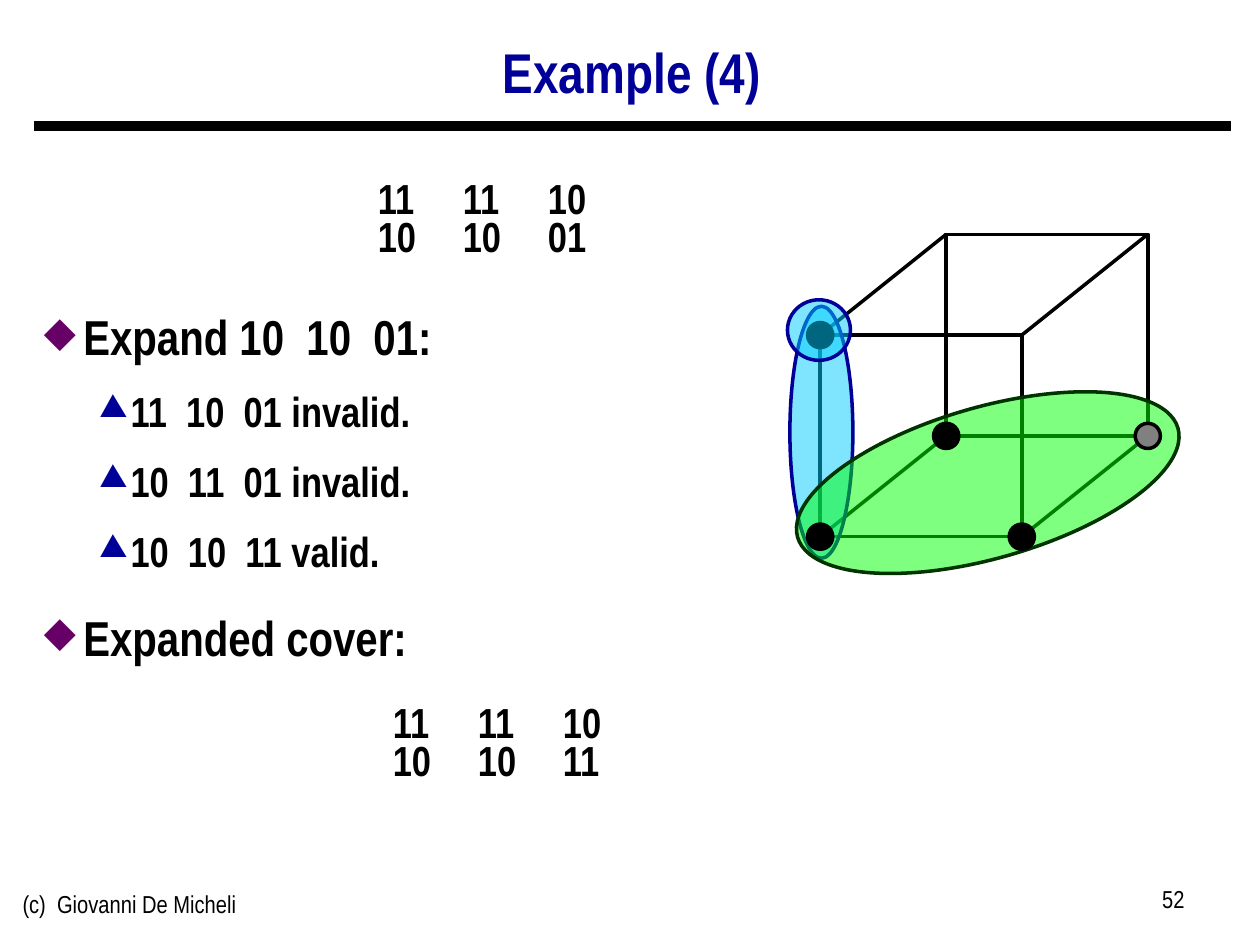
from dataclasses import dataclass
from typing import Optional

from lxml.etree import SubElement
from pptx import Presentation
from pptx.dml.color import RGBColor
from pptx.enum.shapes import MSO_CONNECTOR as Connector, MSO_SHAPE as Shape
from pptx.enum.text import MSO_ANCHOR as Anchor, PP_ALIGN as Align
from pptx.oxml.ns import qn
from pptx.util import Pt


@dataclass(frozen=True)
class Theme:
    font: str = "Arial Narrow"
    ink: str = "000000"
    navy: str = "000099"
    purple: str = "660066"
    cyan: str = "00CCFF"
    green: str = "00FF00"
    dark_green: str = "003300"
    gray: str = "808080"
    title: float = 32
    heading: float = 28
    item: float = 24
    footer: float = 14
    stroke: float = 2
    rule: float = 6


@dataclass(frozen=True)
class Frame:
    left: float
    top: float
    width: float
    height: float

    def lengths(self) -> tuple:
        return Pt(self.left), Pt(self.top), Pt(self.width), Pt(self.height)


@dataclass(frozen=True)
class Level:
    size: float
    margin: float
    hanging: float
    spacing: float
    before: float
    bullet: str
    bullet_color: str
    bullet_percent: int


@dataclass(frozen=True)
class Oval:
    frame: Frame
    fill: str
    line: str
    rotation: float = 0
    alpha: Optional[int] = None


THEME = Theme()
HEADING = Level(THEME.heading, 22.5, 22.5, 1.25, 9.7, "◆", THEME.purple, 85)
ITEM = Level(THEME.item, 49.5, 18, 1.1, 8.3, "▲", THEME.navy, 75)
OUTLINE = [
    (HEADING, "Expand 10  10  01:"),
    (ITEM, "11  10  01 invalid."),
    (ITEM, "10  11  01 invalid."),
    (ITEM, "10  10  11 valid."),
    (HEADING, "Expanded cover:"),
]
COLUMN_PITCH = 48.6
ROW_PITCH = 21.6
CUBE_LEFT, CUBE_TOP, CUBE_SIDE = 468.7, 191.5, 115.2
DEPTH_X, DEPTH_Y = 72, -57.6
DOT = 14.4


def style(para, size: float, color: str, bold: bool = False) -> None:
    para.font.name = THEME.font
    para.font.size = Pt(size)
    para.font.bold = bold
    para.font.color.rgb = RGBColor.from_string(color)


def add_text(page, frame: Frame, text: str, size: float, color: str = THEME.ink,
             bold: bool = False, align: Align = Align.LEFT, wrap: bool = True):
    box = page.shapes.add_textbox(*frame.lengths())
    box.text_frame.word_wrap = wrap
    para = box.text_frame.paragraphs[0]
    para.text = text
    para.alignment = align
    style(para, size, color, bold)
    return box


def add_bullet(para, level: Level) -> None:
    properties = para._p.get_or_add_pPr()
    properties.set("marL", str(Pt(level.margin)))
    properties.set("indent", str(-Pt(level.hanging)))
    color = SubElement(properties, qn("a:buClr"))
    SubElement(color, qn("a:srgbClr"), val=level.bullet_color)
    SubElement(properties, qn("a:buSzPct"), val=str(level.bullet_percent * 1000))
    SubElement(properties, qn("a:buChar"), char=level.bullet)


def add_outline(page, frame: Frame) -> None:
    box = page.shapes.add_textbox(*frame.lengths())
    box.text_frame.word_wrap = True
    for index, (level, text) in enumerate(OUTLINE):
        para = box.text_frame.add_paragraph() if index else box.text_frame.paragraphs[0]
        para.text = text
        para.line_spacing = level.spacing
        para.space_before = Pt(level.before)
        add_bullet(para, level)
        style(para, level.size, THEME.ink, bold=True)


def add_cover(page, left: float, top: float, rows: list[list[str]]) -> None:
    for index, row in enumerate(rows):
        frame = Frame(left, top + index * ROW_PITCH, 134.6, 36)
        box = add_text(page, frame, "\t".join(row), THEME.item, bold=True)
        properties = box.text_frame.paragraphs[0]._p.get_or_add_pPr()
        stops = SubElement(properties, qn("a:tabLst"))
        properties.insert(0, stops)
        for column in range(1, len(row)):
            SubElement(stops, qn("a:tab"), pos=str(Pt(column * COLUMN_PITCH)), algn="l")


def add_line(page, start: tuple[float, float], end: tuple[float, float], width: float) -> None:
    line = page.shapes.add_connector(Connector.STRAIGHT, *map(Pt, start + end))
    line.line.color.rgb = RGBColor.from_string(THEME.ink)
    line.line.width = Pt(width)
    SubElement(line._element.spPr, qn("a:effectLst"))


def add_figure(page, kind: Shape, frame: Frame, line: str):
    figure = page.shapes.add_shape(kind, *frame.lengths())
    figure.shadow.inherit = False
    figure.line.color.rgb = RGBColor.from_string(line)
    figure.line.width = Pt(THEME.stroke)
    return figure


def add_oval(page, oval: Oval) -> None:
    figure = add_figure(page, Shape.OVAL, oval.frame, oval.line)
    figure.rotation = oval.rotation
    figure.fill.solid()
    figure.fill.fore_color.rgb = RGBColor.from_string(oval.fill)
    if oval.alpha is not None:
        color = figure._element.spPr.find(qn("a:solidFill")).find(qn("a:srgbClr"))
        SubElement(color, qn("a:alpha"), val=str(oval.alpha * 1000))


def corner(right: int, down: int, back: int) -> tuple[float, float]:
    return (CUBE_LEFT + right * CUBE_SIDE + back * DEPTH_X,
            CUBE_TOP + down * CUBE_SIDE + back * DEPTH_Y)


def dot(right: int, down: int, back: int, fill: str = THEME.ink) -> Oval:
    x, y = corner(right, down, back)
    return Oval(Frame(x - DOT / 2, y - DOT / 2, DOT, DOT), fill, THEME.ink)


def add_cube(page) -> None:
    for back in (0, 1):
        face = Frame(*corner(0, 0, back), CUBE_SIDE, CUBE_SIDE)
        add_figure(page, Shape.RECTANGLE, face, THEME.ink).fill.background()
    for right, down in ((0, 0), (1, 0), (1, 1), (0, 1)):
        add_line(page, corner(right, down, 0), corner(right, down, 1), THEME.stroke)
    ovals = [
        Oval(Frame(397.4, 229, 144, 36), THEME.cyan, THEME.navy, 270, 50),
        dot(0, 0, 0),
        Oval(Frame(451.4, 232.6, 226.1, 86.4), THEME.green, THEME.dark_green, 344, 50),
        dot(0, 1, 0),
        dot(0, 1, 1),
        dot(1, 1, 0),
        dot(1, 1, 1, THEME.gray),
        Oval(Frame(450.7, 170.6, 34.6, 36), THEME.cyan, THEME.navy, 270, 50),
    ]
    for oval in ovals:
        add_oval(page, oval)


def main() -> None:
    deck = Presentation()
    deck.slide_width, deck.slide_height = Pt(720), Pt(540)
    page = deck.slides.add_slide(deck.slide_layouts[6])
    add_line(page, (19.4, 72), (703.4, 72), THEME.rule)
    add_text(page, Frame(5.8, 504.7, 228.2, 37.4), "(c)  Giovanni De Micheli", THEME.footer)
    add_text(page, Frame(516.2, 501.8, 167.8, 37.4), "52", THEME.footer, align=Align.RIGHT)
    title = add_text(page, Frame(18.7, 15.8, 684.7, 54), "Example (4)", THEME.title,
                     THEME.navy, bold=True, align=Align.CENTER)
    title.text_frame.vertical_anchor = Anchor.MIDDLE
    title.text_frame.paragraphs[0].line_spacing = 0.9
    add_outline(page, Frame(18, 163.4, 684.7, 331.2))
    add_cover(page, 208.8, 95, [["11", "11", "10"], ["10", "10", "01"]])
    add_cover(page, 217.4, 394.6, [["11", "11", "10"], ["10", "10", "11"]])
    add_cube(page)
    deck.save("out.pptx")


if __name__ == "__main__":
    main()
